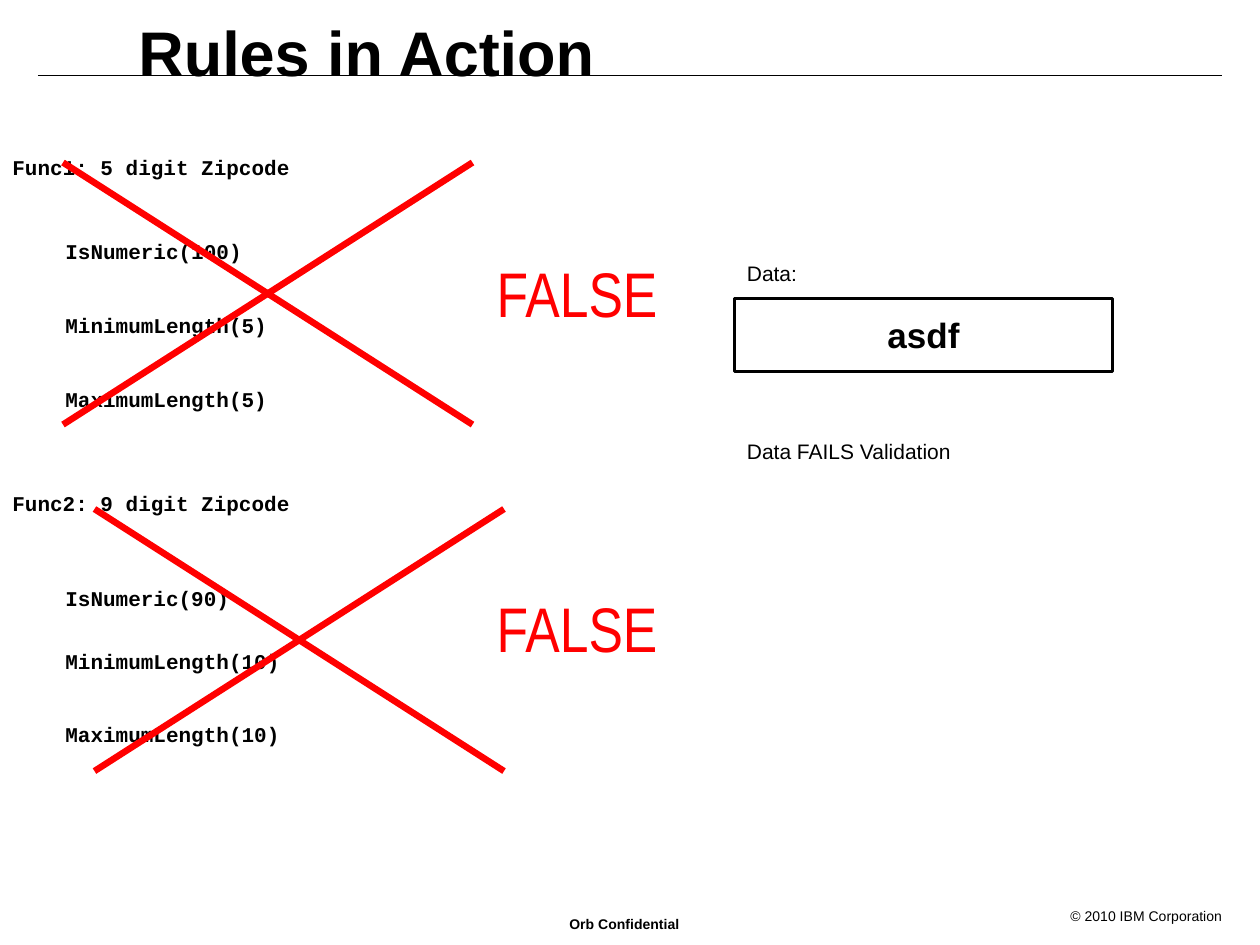
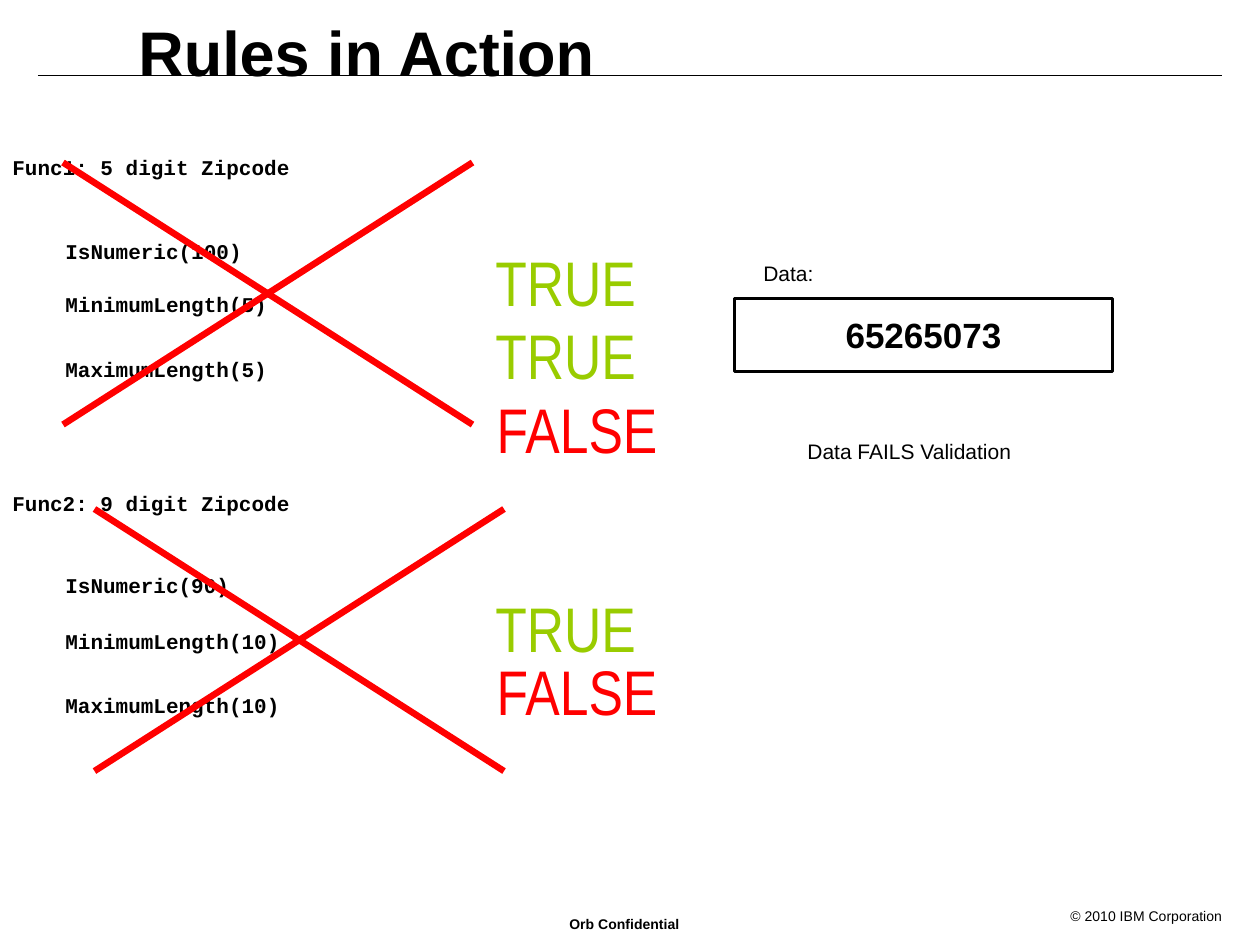
import pptx
import pptx.dml.color
import pptx.enum.shapes
import pptx.enum.text
import pptx.oxml.ns
import pptx.util
from lxml import etree

Inches = pptx.util.Inches
RGBColor = pptx.dml.color.RGBColor
ALIGN = pptx.enum.text.PP_ALIGN
FIT = pptx.enum.text.MSO_AUTO_SIZE

BLACK = RGBColor(0, 0, 0)
WHITE = RGBColor(255, 255, 255)
RED = RGBColor(255, 0, 0)
GREEN = RGBColor(0x99, 0xCC, 0)

BODY_FONT = "Arial"
CODE_FONT = "Courier New"
VERDICT_FONT = "Arial Narrow"

CROSS_WIDTH, CROSS_HEIGHT = 3.25, 2.08
VERDICT_STYLES = {"TRUE": (3.83, GREEN), "FALSE": (3.92, RED)}


def add_text(page, text, left, top, width, height, size=12, font=BODY_FONT,
             color=BLACK, bold=False, align=ALIGN.LEFT, wrap=True,
             fit=FIT.SHAPE_TO_FIT_TEXT, spacing=0.9):
    box = page.shapes.add_textbox(Inches(left), Inches(top), Inches(width), Inches(height))
    frame = box.text_frame
    frame.text = text
    frame.word_wrap = wrap
    frame.auto_size = fit
    para = frame.paragraphs[0]
    para.alignment = align
    para.line_spacing = spacing
    span = para.runs[0]
    span.font.size = pptx.util.Pt(size)
    span.font.name = font
    span.font.bold = bold
    span.font.color.rgb = color


def add_line(page, start, end, color, width):
    line = page.shapes.add_connector(
        pptx.enum.shapes.MSO_CONNECTOR.STRAIGHT,
        Inches(start[0]), Inches(start[1]), Inches(end[0]), Inches(end[1]))
    line.line.color.rgb = color
    line.line.width = pptx.util.Pt(width)
    etree.SubElement(line._element.spPr, pptx.oxml.ns.qn("a:effectLst"))


def add_frame(page):
    add_line(page, (0.3, 0.6), (9.7, 0.6), BLACK, 0.75)
    add_text(page, "© 2010 IBM Corporation", 8.3, 7.15, 1.5, 0.2, size=8,
             align=ALIGN.RIGHT, fit=FIT.NONE, spacing=1.0)
    add_text(page, "Orb Confidential", 4.42, 7.23, 1.08, 0.22, size=8,
             bold=True, wrap=False)


def add_title(page, title):
    add_text(page, title, 1, 0.13, 7.33, 0.71, size=36, bold=True)


def add_function(page, heading, heading_top, checks):
    add_text(page, heading, 0, heading_top, 4.67, 0.5, font=CODE_FONT, bold=True)
    for check, top in checks:
        add_text(page, check, 0.42, top, 3.75, 0.5, font=CODE_FONT, bold=True)


def add_data(page, value, label_left, outcome_left):
    field = page.shapes.add_shape(
        pptx.enum.shapes.MSO_SHAPE.RECTANGLE,
        Inches(5.83), Inches(2.37), Inches(3), Inches(0.58))
    field.shadow.inherit = False
    field.fill.solid()
    field.fill.fore_color.rgb = WHITE
    field.line.color.rgb = BLACK
    field.line.width = pptx.util.Pt(1.75)
    add_text(page, "Data:", label_left, 2.04, 1, 0.3)
    add_text(page, value, 5.83, 2.48, 3, 0.44, size=20, bold=True, align=ALIGN.CENTER)
    add_text(page, "Data FAILS Validation", outcome_left, 3.45, 3.35, 0.5)


def add_verdict(page, verdict, top):
    left, color = VERDICT_STYLES[verdict]
    add_text(page, verdict, left, top, 1.32, 0.25, size=36, font=VERDICT_FONT,
             color=color, align=ALIGN.CENTER, wrap=False, fit=FIT.NONE)


def add_cross(page, left, top):
    right, bottom = left + CROSS_WIDTH, top + CROSS_HEIGHT
    add_line(page, (left, top), (right, bottom), RED, 3.75)
    add_line(page, (left, bottom), (right, top), RED, 3.75)


def add_rules_page(deck, value, label_left, outcome_left, zip5_tops, zip9_tops, verdicts):
    page = deck.slides.add_slide(deck.slide_layouts[6])
    add_frame(page)
    zip5_checks = ("IsNumeric(100)", "MinimumLength(5)", "MaximumLength(5)")
    zip9_checks = ("IsNumeric(90)", "MinimumLength(10)", "MaximumLength(10)")
    add_function(page, "Func1: 5 digit Zipcode", 1.2, zip(zip5_checks, zip5_tops))
    add_data(page, value, label_left, outcome_left)
    add_function(page, "Func2: 9 digit Zipcode", 3.87, zip(zip9_checks, zip9_tops))
    for verdict, top in verdicts:
        add_verdict(page, verdict, top)
    add_cross(page, 0.5, 1.29)
    add_cross(page, 0.75, 4.04)
    add_title(page, "Rules in Action")


def main():
    deck = pptx.Presentation()
    deck.slide_width = Inches(10)
    deck.slide_height = Inches(7.5)
    add_rules_page(deck, "asdf", 5.83, 5.83,
                   (1.87, 2.45, 3.04), (4.62, 5.12, 5.7),
                   [("FALSE", 2.04), ("FALSE", 4.7)])
    add_rules_page(deck, "65265073", 5.96, 6.31,
                   (1.87, 2.29, 2.8), (4.52, 4.96, 5.47),
                   [("TRUE", 1.95), ("TRUE", 2.53), ("FALSE", 3.12),
                    ("TRUE", 4.7), ("FALSE", 5.2)])
    deck.save("out.pptx")


if __name__ == "__main__":
    main()
